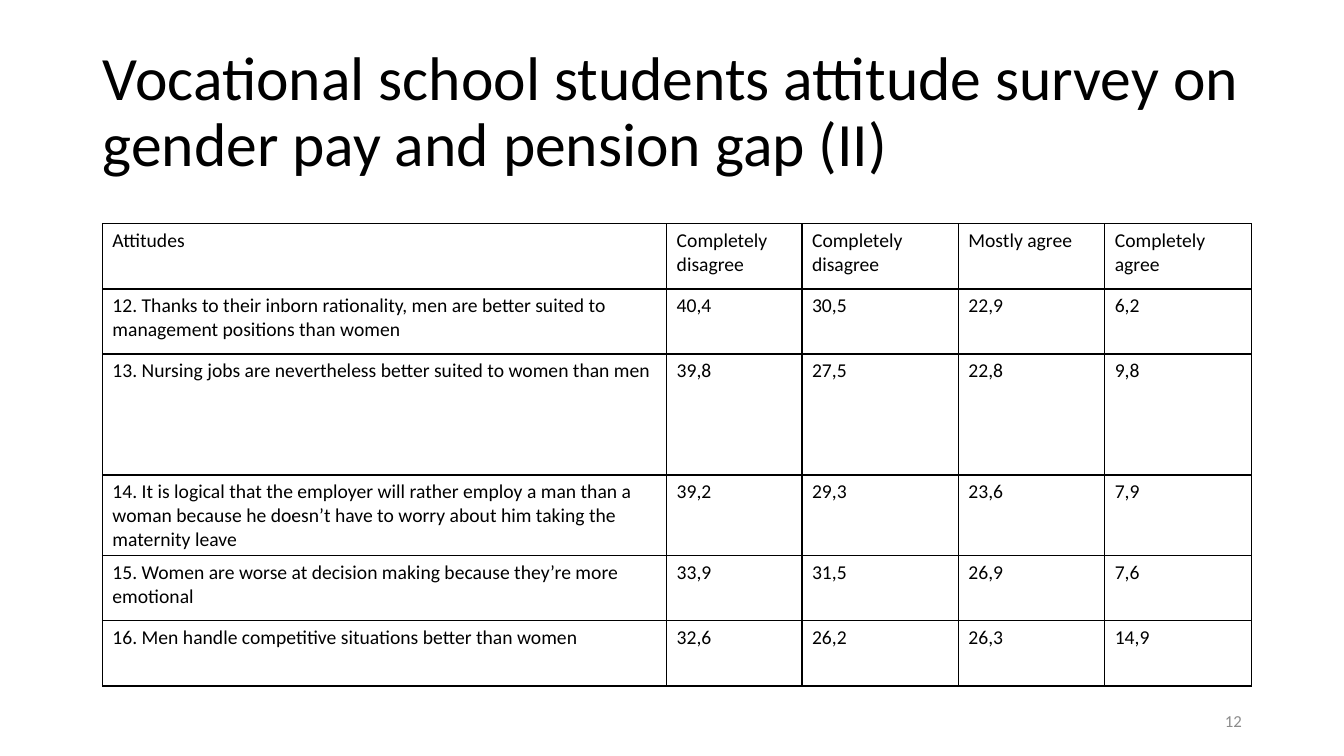
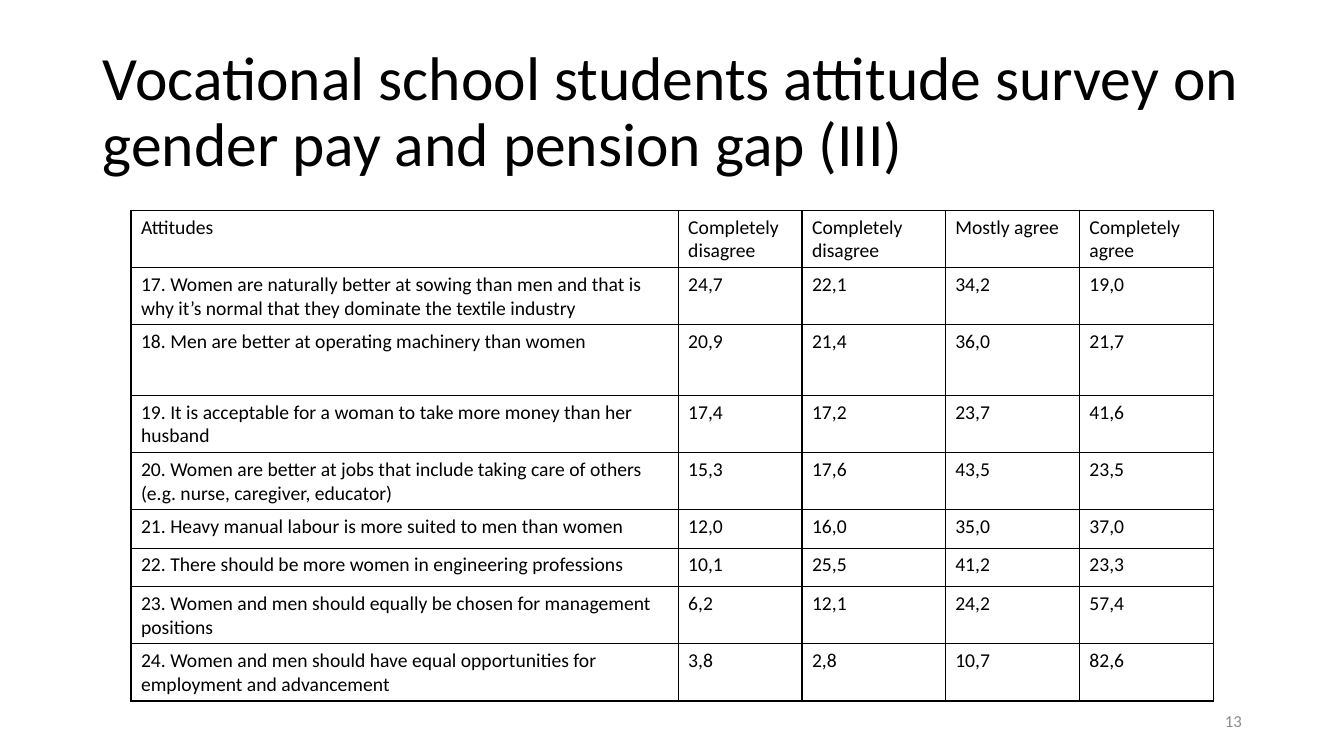
from lxml import etree
from pptx import Presentation
from pptx.dml.color import RGBColor
from pptx.enum import text as t
from pptx.oxml import ns
from pptx.util import Cm, Pt

# Content
TITLE = "Vocational school students attitude survey on gender pay and pension gap ({})"
HEADINGS = ("Attitudes", "Completely disagree", "Completely disagree",
            "Mostly agree", "Completely agree")
SURVEYS = [
    {
        "part": "II", "page": 12, "left": 2.58, "top": 5.64,
        "columns": (14.22, 3.41, 3.94, 3.69, 3.69),
        "heights": (1.64, 1.64, 3.05, 1.64, 1.64, 1.64),
        "answers": [
            ("12. Thanks to their inborn rationality, men are better suited to "
             "management positions than women", "40,4", "30,5", "22,9", "6,2"),
            ("13. Nursing jobs are nevertheless better suited to women than men",
             "39,8", "27,5", "22,8", "9,8"),
            ("14. It is logical that the employer will rather employ a man than a "
             "woman because he doesn’t have to worry about him taking the "
             "maternity leave", "39,2", "29,3", "23,6", "7,9"),
            ("15. Women are worse at decision making because they’re more emotional",
             "33,9", "31,5", "26,9", "7,6"),
            ("16. Men handle competitive situations better than women",
             "32,6", "26,2", "26,3", "14,9"),
        ],
    },
    {
        "part": "III", "page": 13, "left": 3.3, "top": 5.3,
        "columns": (13.79, 3.12, 3.61, 3.38, 3.38),
        "heights": (1.22, 1.22, 1.78, 1.22, 1.22, 0.97, 0.97, 1.22, 1.22),
        "answers": [
            ("17. Women are naturally better at sowing than men and that is why "
             "it’s normal that they dominate the textile industry",
             "24,7", "22,1", "34,2", "19,0"),
            ("18. Men are better at operating machinery than women",
             "20,9", "21,4", "36,0", "21,7"),
            ("19. It is acceptable for a woman to take more money than her husband",
             "17,4", "17,2", "23,7", "41,6"),
            ("20. Women are better at jobs that include taking care of others "
             "(e.g. nurse, caregiver, educator)", "15,3", "17,6", "43,5", "23,5"),
            ("21. Heavy manual labour is more suited to men than women",
             "12,0", "16,0", "35,0", "37,0"),
            ("22. There should be more women in engineering professions",
             "10,1", "25,5", "41,2", "23,3"),
            ("23. Women and men should equally be chosen for management positions",
             "6,2", "12,1", "24,2", "57,4"),
            ("24. Women and men should have equal opportunities for employment "
             "and advancement", "3,8", "2,8", "10,7", "82,6"),
        ],
    },
]

# Shared style
COLORS = {"ink": "000000", "page": "8C8C8C"}
FONT = "Calibri"
TITLE_BOX = (2.34, 1.02, 29.21, 3.68)
PAGE_BOX = (23.93, 17.65, 7.62, 1.02)


def style_text(frame, size, color):
    for paragraph in frame.paragraphs:
        for run in paragraph.runs:
            run.font.name = FONT
            run.font.size = Pt(size)
            run.font.color.rgb = RGBColor.from_string(COLORS[color])


def add_text(slide, box, words, size, color):
    frame = slide.shapes.add_textbox(*map(Cm, box)).text_frame
    frame.word_wrap = True
    frame.vertical_anchor = t.MSO_ANCHOR.MIDDLE
    frame.text = words
    style_text(frame, size, color)
    return frame.paragraphs[0]


def add_borders(cell):
    properties = cell._tc.get_or_add_tcPr()
    # Borders must come before the fill
    for index, side in enumerate(("lnL", "lnR", "lnT", "lnB")):
        line = etree.Element(ns.qn("a:" + side), w=str(Pt(1)))
        fill = etree.SubElement(line, ns.qn("a:solidFill"))
        etree.SubElement(fill, ns.qn("a:srgbClr"), val=COLORS["ink"])
        properties.insert(index, line)


def add_survey_table(slide, survey):
    rows = [HEADINGS, *survey["answers"]]
    columns, heights = survey["columns"], survey["heights"]
    area = (survey["left"], survey["top"], sum(columns), sum(heights))
    table = slide.shapes.add_table(len(rows), len(columns), *map(Cm, area)).table
    table.first_row = table.horz_banding = False
    for column, width in zip(table.columns, columns):
        column.width = Cm(width)
    for row, height, values in zip(table.rows, heights, rows):
        row.height = Cm(height)
        for cell, value in zip(row.cells, values):
            cell.text_frame.text = value
            style_text(cell.text_frame, 14, "ink")
            cell.fill.background()
            add_borders(cell)


def main():
    deck = Presentation()
    deck.slide_width, deck.slide_height = Cm(33.87), Cm(19.05)
    for survey in SURVEYS:
        slide = deck.slides.add_slide(deck.slide_layouts[6])
        title = add_text(slide, TITLE_BOX, TITLE.format(survey["part"]), 44, "ink")
        title.line_spacing = 0.9
        page = add_text(slide, PAGE_BOX, str(survey["page"]), 12, "page")
        page.alignment = t.PP_ALIGN.RIGHT
        add_survey_table(slide, survey)
    deck.save("out.pptx")


if __name__ == "__main__":
    main()
